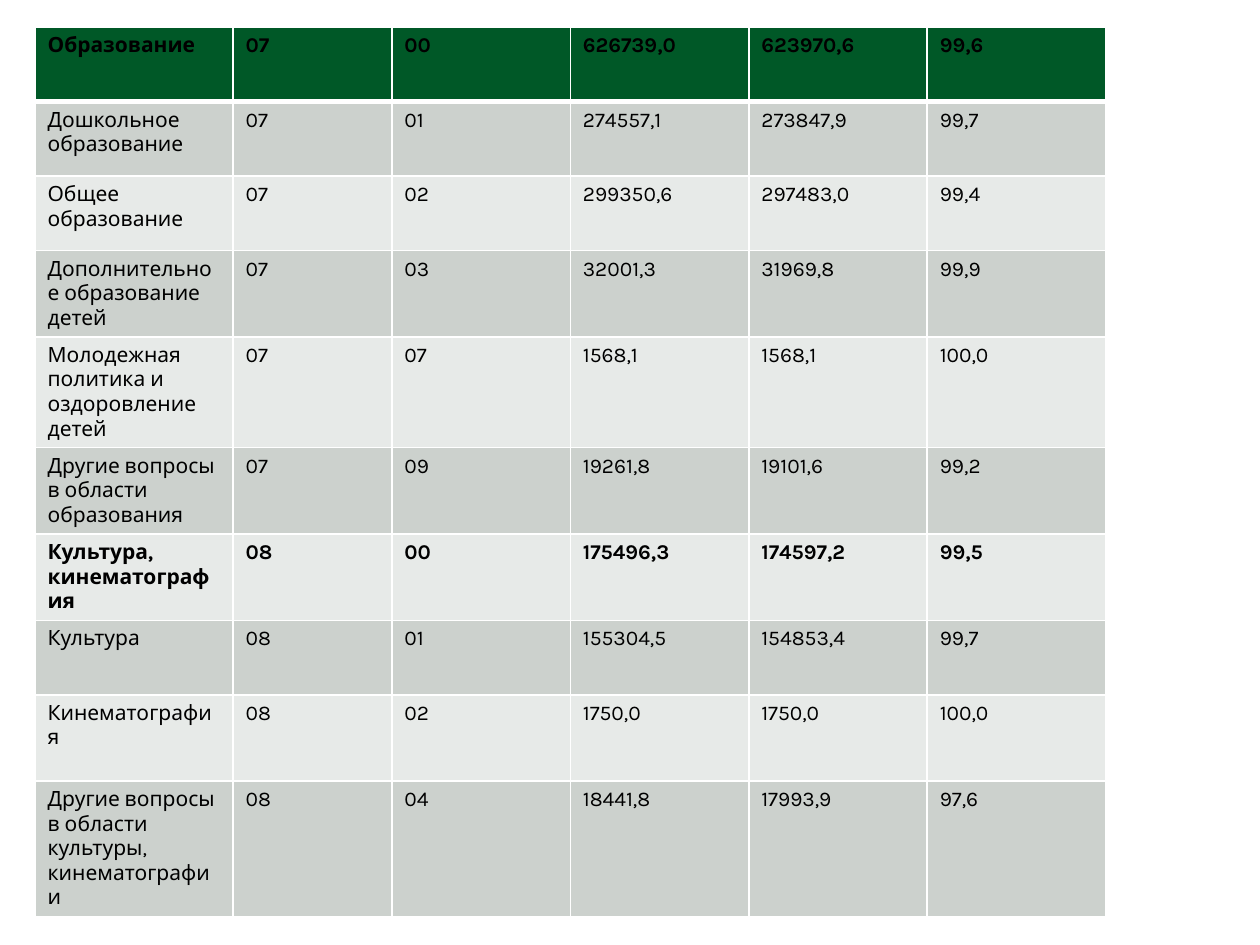
from lxml import etree
from pptx import Presentation
from pptx.dml.color import RGBColor
from pptx.oxml.ns import qn
from pptx.util import Pt

BLACK = RGBColor(0x00, 0x00, 0x00)
WHITE = RGBColor(0xFF, 0xFF, 0xFF)
GREEN = RGBColor(0x00, 0x58, 0x27)
BANDS = RGBColor(0xCC, 0xD1, 0xCD), RGBColor(0xE7, 0xEA, 0xE8)
FONT = "Karla"

# Name, section, subsection, plan, actual, percent done
BUDGET = [
    ("Образование", "07", "00", "626739,0", "623970,6", "99,6"),
    ("Дошкольное образование", "07", "01", "274557,1", "273847,9", "99,7"),
    ("Общее образование", "07", "02", "299350,6", "297483,0", "99,4"),
    ("Дополнительное образование детей", "07", "03", "32001,3", "31969,8", "99,9"),
    ("Молодежная политика и оздоровление детей", "07", "07", "1568,1", "1568,1", "100,0"),
    ("Другие вопросы в области образования", "07", "09", "19261,8", "19101,6", "99,2"),
    ("Культура,\nкинематография", "08", "00", "175496,3", "174597,2", "99,5"),
    ("Культура", "08", "01", "155304,5", "154853,4", "99,7"),
    ("Кинематография", "08", "02", "1750,0", "1750,0", "100,0"),
    ("Другие вопросы в области культуры, кинематографии", "08", "04",
     "18441,8", "17993,9", "97,6"),
]
LEFT, TOP = 20, 15.4
COLUMN_WIDTHS = [113.2, 90.7, 102, 102, 102, 102]
ROW_HEIGHT = 42.6
TALL_ROWS = {"Кинематография": 49.2}
HEADER_RULE, GRID_RULE = 3, 1


def write(cell, text, size=12, bold=False, color=BLACK):
    cell.text_frame.text = text
    for para in cell.text_frame.paragraphs:
        for span in para.runs:
            span.font.name = FONT
            span.font.size = Pt(size)
            span.font.bold = bold
            span.font.color.rgb = color


def set_borders(cell, color=WHITE, **widths):
    """Draw the cell's sides, given in schema order: L, R, T, B."""
    properties = cell._tc.get_or_add_tcPr()
    for position, (side, width) in enumerate(widths.items()):
        line = etree.Element(qn(f"a:ln{side}"), w=str(Pt(width)))
        fill = etree.SubElement(line, qn("a:solidFill"))
        etree.SubElement(fill, qn("a:srgbClr"), val=str(color))
        properties.insert(position, line)


def add_budget_table(page):
    heights = [TALL_ROWS.get(row[0], ROW_HEIGHT) for row in BUDGET]
    table = page.shapes.add_table(
        len(BUDGET), len(COLUMN_WIDTHS), Pt(LEFT), Pt(TOP),
        Pt(sum(COLUMN_WIDTHS)), Pt(sum(heights))).table
    for column, width in zip(table.columns, COLUMN_WIDTHS):
        column.width = Pt(width)
    for index, (values, height) in enumerate(zip(BUDGET, heights)):
        table.rows[index].height = Pt(height)
        is_total = values[2] == "00"
        for cell, value in zip(table.rows[index].cells, values):
            write(cell, value, bold=is_total)
            cell.fill.solid()
            cell.fill.fore_color.rgb = BANDS[(index - 1) % 2] if index else GREEN
            set_borders(cell, L=GRID_RULE, R=GRID_RULE,
                        T=HEADER_RULE if index == 1 else GRID_RULE,
                        B=HEADER_RULE if index == 0 else GRID_RULE)


def main():
    deck = Presentation()
    deck.slide_width, deck.slide_height = Pt(720), Pt(540)
    page = deck.slides.add_slide(deck.slide_layouts[6])
    add_budget_table(page)
    deck.save("out.pptx")


if __name__ == "__main__":
    main()
